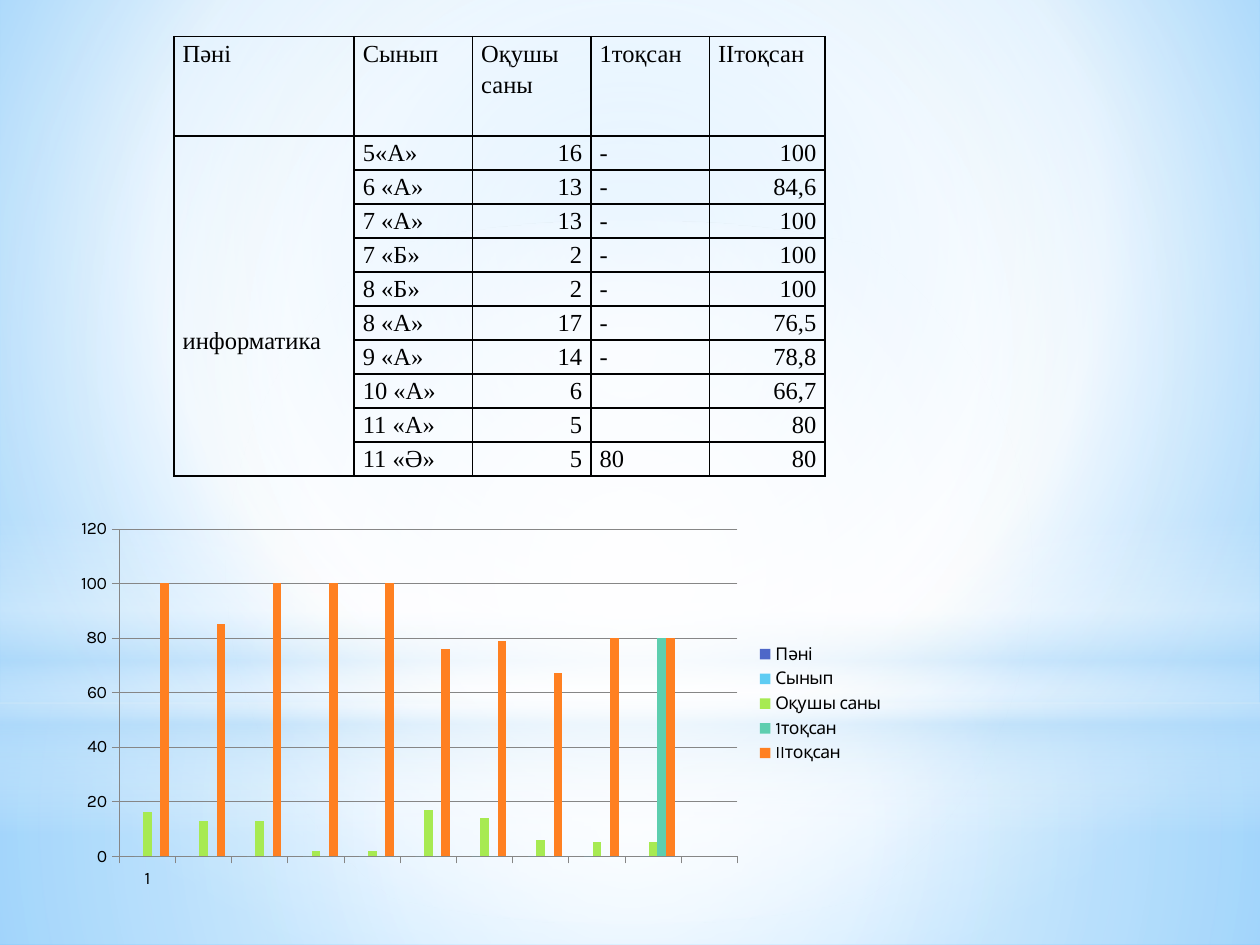
from lxml.etree import SubElement
from pptx import Presentation
from pptx.chart.data import CategoryChartData
from pptx.dml.color import RGBColor
from pptx.enum.chart import XL_CHART_TYPE, XL_LEGEND_POSITION
from pptx.enum.shapes import MSO_SHAPE
from pptx.enum.text import MSO_ANCHOR, PP_ALIGN
from pptx.oxml.ns import qn
from pptx.util import Inches, Pt

# Content
HEADERS = ["Пәні", "Сынып", "Оқушы саны", "1тоқсан", "IIтоқсан"]
SUBJECT = "информатика"
CLASSES = [
    ("5«А»", "16", "-", "100"),
    ("6 «А»", "13", "-", "84,6"),
    ("7 «А»", "13", "-", "100"),
    ("7 «Б»", "2", "-", "100"),
    ("8 «Б»", "2", "-", "100"),
    ("8 «А»", "17", "-", "76,5"),
    ("9 «А»", "14", "-", "78,8"),
    ("10 «А»", "6", "", "66,7"),
    ("11 «А»", "5", "", "80"),
    ("11 «Ә»", "5", "80", "80"),
]
SERIES = [("Пәні ", "4E67C8"), ("Сынып ", "5ECCF3"), ("Оқушы саны ", "A7EA52"),
          ("1тоқсан", "5DCEAF"), ("IIтоқсан", "FF8021")]
COLUMN_WIDTHS = [1.43, 0.94, 0.94, 0.94, 0.92]
HEADER_HEIGHT, ROW_HEIGHT = 0.79, 0.27
RIGHT_ALIGNED = (2, 4)

# Gradient stops: position, colour, opacity in percent
CENTER = (50, 50, 50, 50)
BACKGROUND = [(0, "9ED5FF", 100), (60, "FFFFFF", 100), (100, "5BB9FF", 100)]
BACKDROP = [
    (MSO_SHAPE.RECTANGLE, (0, 5.58, 10, 1.92), CENTER,
     [(0, "FFFFFF", 91), (37, "FFFFFF", 76), (100, "B4DCFA", 79)]),
    (MSO_SHAPE.RECTANGLE, (0, 0, 10, 5.58), CENTER,
     [(0, "FFFFFF", 89), (48, "FFFFFF", 62), (100, "B4DCFA", 79)]),
    (MSO_SHAPE.RECTANGLE, (0, 4.12, 10, 2.5), None,
     [(0, "FFFFFF", 0), (29, "FFFFFF", 30), (45, "B4DCFA", 40),
      (55, "FFFFFF", 26), (65, "B4DCFA", 60), (100, "FFFFFF", 0)]),
    (MSO_SHAPE.OVAL, (0, 1.75, 10, 5.58), CENTER,
     [(0, "FFFFFF", 100), (56, "FFFFFF", 0)]),
]


def color(value):
    return RGBColor.from_string(value)


def add(parent, tag, **attributes):
    texts = {name: str(value) for name, value in attributes.items()}
    return SubElement(parent, qn(tag), texts)


def set_gradient(owner, fill, stops, focus):
    """Fill with a circular gradient, or a vertical one when focus is None."""
    fill.solid()
    solid = next(owner.iter(qn("a:solidFill")))
    gradient = add(solid.getparent(), "a:gradFill", rotWithShape=1)
    solid.getparent().replace(solid, gradient)
    stop_list = add(gradient, "a:gsLst")
    for position, value, opacity in stops:
        stop = add(stop_list, "a:gs", pos=position * 1000)
        add(add(stop, "a:srgbClr", val=value), "a:alpha", val=opacity * 1000)
    if focus is None:
        add(gradient, "a:lin", ang=90 * 60000, scaled=0)
    else:
        sides = {side: inset * 1000 for side, inset in zip("ltrb", focus)}
        add(add(gradient, "a:path", path="circle"), "a:fillToRect", **sides)


def set_borders(cell):
    properties = cell._tc.get_or_add_tcPr()
    for index, side in enumerate(("a:lnL", "a:lnR", "a:lnT", "a:lnB")):
        line = add(properties, side, w=Pt(1))
        add(add(line, "a:solidFill"), "a:srgbClr", val="000000")
        properties.insert(index, line)


def format_cell(cell, text, alignment):
    cell.fill.background()
    set_borders(cell)
    cell.margin_left = cell.margin_right = Inches(0.07)
    cell.margin_top = cell.margin_bottom = 0
    cell.text_frame.text = text
    paragraph = cell.text_frame.paragraphs[0]
    paragraph.alignment = alignment
    paragraph.line_spacing = 1.15
    for run in paragraph.runs:
        run.font.size = Pt(14)
        run.font.name = "Times New Roman"
        run.font.color.rgb = color("000000")
    if not text:
        add(paragraph._p, "a:endParaRPr", sz=1400)


def add_table(slide):
    height = HEADER_HEIGHT + ROW_HEIGHT * len(CLASSES)
    table = slide.shapes.add_table(
        len(CLASSES) + 1, len(HEADERS), Inches(1.38), Inches(0.29),
        Inches(sum(COLUMN_WIDTHS)), Inches(height)).table
    table.first_row = table.horz_banding = False
    for column, width in zip(table.columns, COLUMN_WIDTHS):
        column.width = Inches(width)
    subjects = [SUBJECT] + [""] * (len(CLASSES) - 1)
    rows = [HEADERS] + [(name, *row) for name, row in zip(subjects, CLASSES)]
    for i, row in enumerate(rows):
        table.rows[i].height = Inches(ROW_HEIGHT if i else HEADER_HEIGHT)
        for j, text in enumerate(row):
            right = i > 0 and j in RIGHT_ALIGNED
            format_cell(table.cell(i, j), text,
                        PP_ALIGN.RIGHT if right else PP_ALIGN.LEFT)
    # The subject spans all classes and sits below the middle
    subject = table.cell(1, 0)
    subject.merge(table.cell(len(CLASSES), 0))
    subject.vertical_anchor = MSO_ANCHOR.MIDDLE
    subject.margin_top = Inches(0.53)


def number(text):
    if not text:
        return None
    return 0 if text == "-" else round(float(text.replace(",", ".")))


def add_chart(slide):
    data = CategoryChartData()
    # Only the first category is labelled, and the last one is empty
    data.categories = ["1"] + [""] * len(CLASSES)
    columns = [[None] * len(CLASSES), [0] * len(CLASSES)]
    columns += [[number(row[j]) for row in CLASSES] for j in (1, 2, 3)]
    for (name, _), values in zip(SERIES, columns):
        data.add_series(name, values + [None])
    chart = slide.shapes.add_chart(
        XL_CHART_TYPE.COLUMN_CLUSTERED, Inches(0.51), Inches(4.06),
        Inches(6.64), Inches(3.05), data).chart
    chart.has_title = False
    chart.font.size = Pt(10)
    chart.font.name = "Karla"
    chart.font.color.rgb = color("000000")
    chart.has_legend = True
    chart.legend.position = XL_LEGEND_POSITION.RIGHT
    chart.legend.include_in_layout = False
    plot = chart.plots[0]
    plot.gap_width = 150
    plot.vary_by_categories = False
    for series, (_, value) in zip(plot.series, SERIES):
        series.format.fill.solid()
        series.format.fill.fore_color.rgb = color(value)
    axis = chart.value_axis
    axis.minimum_scale, axis.maximum_scale, axis.major_unit = 0, 120, 20
    axis.has_major_gridlines = True
    for part in (axis, chart.category_axis, axis.major_gridlines):
        part.format.line.color.rgb = color("868686")
        part.format.line.width = Pt(0.5)


def main():
    presentation = Presentation()
    presentation.slide_width, presentation.slide_height = Inches(10), Inches(7.5)
    slide = presentation.slides.add_slide(presentation.slide_layouts[6])

    # Background and soft light layers
    set_gradient(slide.element, slide.background.fill, BACKGROUND, (20, 10, 20, 60))
    for kind, box, focus, stops in BACKDROP:
        shape = slide.shapes.add_shape(kind, *map(Inches, box))
        shape.shadow.inherit = False
        shape.line.fill.background()
        set_gradient(shape.element, shape.fill, stops, focus)

    add_table(slide)
    add_chart(slide)
    presentation.save("out.pptx")


if __name__ == "__main__":
    main()
